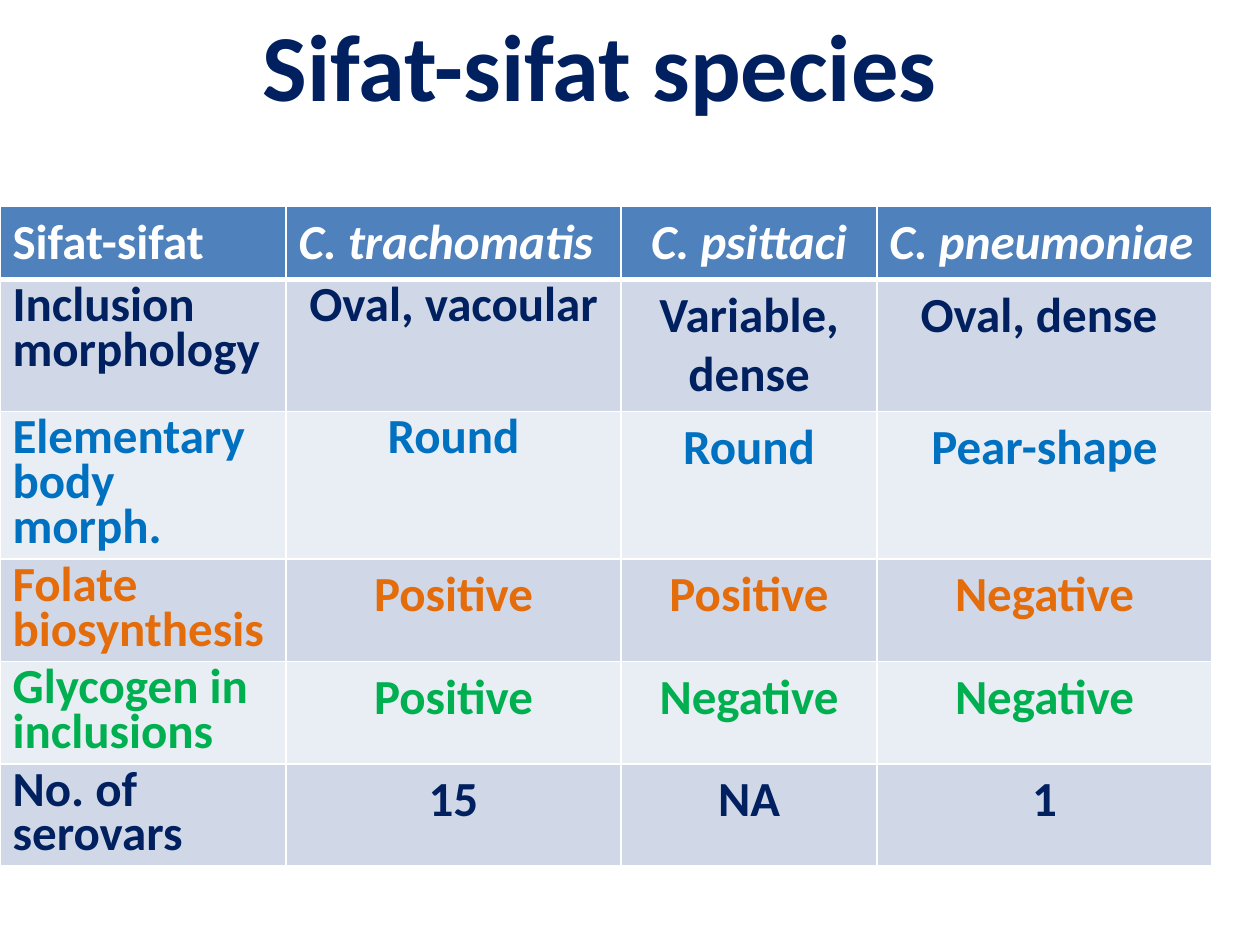
from dataclasses import dataclass

import pptx
import pptx.dml.color
import pptx.enum.text
import pptx.oxml
import pptx.oxml.ns
import pptx.util

RGBColor = pptx.dml.color.RGBColor
Align = pptx.enum.text.PP_ALIGN

WHITE = RGBColor(0xFF, 0xFF, 0xFF)
NAVY = RGBColor(0x00, 0x20, 0x60)
BLUE = RGBColor(0x00, 0x70, 0xC0)
ORANGE = RGBColor(0xE4, 0x6C, 0x0A)
GREEN = RGBColor(0x00, 0xB0, 0x50)
HEADER_FILL = RGBColor(0x4F, 0x81, 0xBD)
BAND_FILLS = (RGBColor(0xD0, 0xD8, 0xE8), RGBColor(0xE9, 0xED, 0xF4))

FONT = "Calibri"
TIGHT = 0.75
PAGE_WIDTH = pptx.util.Inches(10)
PAGE_HEIGHT = pptx.util.Inches(7.5)
TABLE_TOP = pptx.util.Inches(1.64)
COLUMN_WIDTHS = (2.27, 2.66, 2.03, 2.66)


@dataclass(frozen=True)
class TraitRow:
    texts: tuple[str, ...]
    color: RGBColor
    height: float
    tight_columns: int = 1


HEADINGS = TraitRow(
    ("Sifat-sifat", "C. trachomatis", "C. psittaci", "C. pneumoniae"), WHITE, 0.56, 0
)
TRAITS = (
    TraitRow(("Inclusion morphology", "Oval, vacoular", "Variable, dense", "Oval, dense "),
             NAVY, 1.03, 2),
    TraitRow(("Elementary body morph.", "Round", "Round", "Pear-shape"), BLUE, 1.15, 2),
    TraitRow(("Folate biosynthesis", "Positive", "Positive", "Negative"), ORANGE, 0.8),
    TraitRow(("Glycogen in inclusions", "Positive", "Negative", "Negative"), GREEN, 0.8),
    TraitRow(("No. of serovars", "15", "NA", "1"), NAVY, 0.8),
)


def make_line(tag: str, points: float, color: RGBColor):
    width = pptx.util.Pt(points)
    return pptx.oxml.parse_xml(
        f'<a:{tag} {pptx.oxml.ns.nsdecls("a")} w="{width}"><a:solidFill>'
        f'<a:srgbClr val="{color}"/></a:solidFill></a:{tag}>'
    )


def format_font(font, size: float, color: RGBColor, italic: bool = False) -> None:
    font.name = FONT
    font.size = pptx.util.Pt(size)
    font.bold = True
    font.italic = italic
    font.color.rgb = color


def add_title(page) -> None:
    title = page.shapes.title
    title.left, title.top = int(PAGE_WIDTH * 0.187), 0
    title.width, title.height = int(PAGE_WIDTH * 0.578), int(PAGE_HEIGHT * 0.135)
    frame = title.text_frame
    frame.text = "Sifat-sifat species"
    frame.word_wrap = False
    frame.vertical_anchor = pptx.enum.text.MSO_ANCHOR.MIDDLE
    para = frame.paragraphs[0]
    para.alignment = Align.CENTER
    span = para.runs[0]
    format_font(span.font, 54, NAVY)
    span.font._element.insert(0, make_line("ln", 0.8, HEADER_FILL))


def fill_cell(cell, text: str, fill: RGBColor, bottom: float) -> None:
    cell.text = text
    cell.fill.solid()
    cell.fill.fore_color.rgb = fill
    properties = cell._tc.get_or_add_tcPr()
    edges = (("lnL", 1), ("lnR", 1), ("lnT", 1), ("lnB", bottom))
    for position, (tag, points) in enumerate(edges):
        properties.insert(position, make_line(tag, points, WHITE))


def add_trait_table(page) -> None:
    rows = (HEADINGS, *TRAITS)
    width = pptx.util.Inches(sum(COLUMN_WIDTHS))
    height = pptx.util.Inches(sum(row.height for row in rows))
    table = page.shapes.add_table(
        len(rows), len(COLUMN_WIDTHS), 0, TABLE_TOP, width, height
    ).table
    for column, column_width in zip(table.columns, COLUMN_WIDTHS):
        column.width = pptx.util.Inches(column_width)
    for row_index, row in enumerate(rows):
        table.rows[row_index].height = pptx.util.Inches(row.height)
        is_header = row is HEADINGS
        fill = HEADER_FILL if is_header else BAND_FILLS[(row_index - 1) % 2]
        for column_index, text in enumerate(row.texts):
            cell = table.cell(row_index, column_index)
            fill_cell(cell, text, fill, 3 if is_header else 1)
            para = cell.text_frame.paragraphs[0]
            centered = column_index == 2 if is_header else column_index > 0
            para.alignment = Align.CENTER if centered else Align.LEFT
            if column_index < row.tight_columns:
                para.line_spacing = TIGHT
            format_font(para.font, 28, row.color, is_header and column_index > 0)


def main() -> None:
    deck = pptx.Presentation()
    deck.slide_width, deck.slide_height = PAGE_WIDTH, PAGE_HEIGHT
    page = deck.slides.add_slide(deck.slide_layouts.get_by_name("Title Only"))
    add_title(page)
    add_trait_table(page)
    deck.save("out.pptx")


if __name__ == "__main__":
    main()
